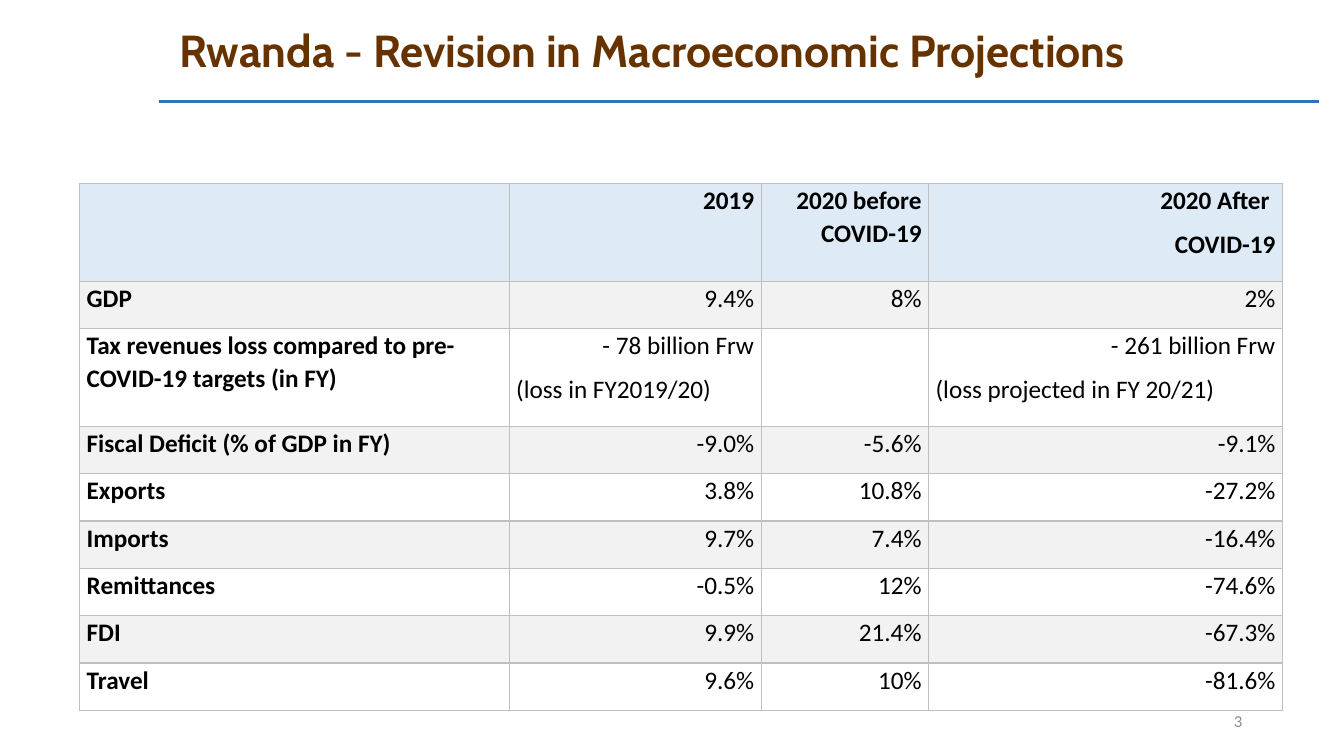
"""Build the slide on revised macroeconomic projections for Rwanda."""
from dataclasses import dataclass
from lxml.etree import SubElement
from pptx import Presentation
from pptx.dml.color import RGBColor as Rgb
from pptx.enum.shapes import MSO_CONNECTOR as Conn
from pptx.enum.text import MSO_ANCHOR as Anchor, PP_ALIGN as Align
from pptx.oxml import parse_xml
from pptx.oxml.ns import nsdecls, qn
from pptx.util import Inches, Pt

TITLE = "Rwanda - Revision in Macroeconomic Projections"
PAGE = "3"
HEAD = ("", "2019", "2020 before COVID-19", "2020 After \nCOVID-19")
ROWS = [
    ("GDP", "9.4%", "8%", "2%"),
    ("Tax revenues loss compared to pre-COVID-19 targets (in FY)",
     "- 78 billion Frw\n(loss in FY2019/20)", "",
     "- 261 billion Frw\n(loss projected in FY 20/21)"),
    ("Fiscal Deficit (% of GDP in FY)", "-9.0%", "-5.6%", "-9.1%"),
    ("Exports", "3.8%", "10.8%", "-27.2%"),
    ("Imports", "9.7%", "7.4%", "-16.4%"),
    ("Remittances", "-0.5%", "12%", "-74.6%"),
    ("FDI", "9.9%", "21.4%", "-67.3%"),
    ("Travel", "9.6%", "10%", "-81.6%"),
]
COLS = (4.26, 2.5, 1.66, 3.51)
LOW, TALL = 0.47, 0.97


@dataclass(frozen=True)
class Theme:
    title: str = "663300"
    rule: str = "2E75B6"
    text: str = "000000"
    page: str = "8C8C8C"
    head: str = "DEEAF6"
    band: str = "F2F2F2"
    grid: str = "BFBFBF"
    big: int = 32
    body: int = 18
    small: int = 12


LOOK = Theme()


def style(para, size, color, face="Calibri", bold=False, **form):
    """Give a paragraph its font and format."""
    font = para.font
    for key, val in dict(size=Pt(size), name=face, bold=bold).items():
        setattr(font, key, val)
    font.color.rgb = Rgb.from_string(color)
    for key, val in form.items():
        setattr(para, key, val)


def label(slide, box, text, *look, **form):
    """Place one line of text in a box."""
    frame = slide.shapes.add_textbox(*map(Inches, box)).text_frame
    frame.word_wrap = True
    frame.vertical_anchor = Anchor.MIDDLE
    frame.text = text
    style(frame.paragraphs[0], *look, **form)


def edge(cell):
    """Draw the four borders of a cell."""
    props = cell._tc.get_or_add_tcPr()
    for i, side in enumerate("LRTB"):
        line = parse_xml(
            f'<a:ln{side} {nsdecls("a")} w="{Pt(1)}"><a:solidFill>'
            f'<a:srgbClr val="{LOOK.grid}"/></a:solidFill></a:ln{side}>')
        props.insert(i, line)


def fill_cell(cell, text, row, col):
    """Write and format one table cell."""
    pads = dict(margin_left=0.07, margin_right=0.07, margin_top=0, margin_bottom=0)
    for key, val in pads.items():
        setattr(cell, key, Inches(val))
    cell.text = text
    for para in cell.text_frame.paragraphs:
        left = col == 0 or para.text.startswith("(")
        style(para, LOOK.body, LOOK.text, bold=row == 0 or col == 0,
              alignment=Align.LEFT if left else Align.RIGHT,
              line_spacing=1.07,
              space_after=Pt(0 if ROWS[row - 1][0].startswith("Fiscal") else 8))
    tint = LOOK.head if row == 0 else LOOK.band if row % 2 else None
    if tint:
        cell.fill.solid()
        cell.fill.fore_color.rgb = Rgb.from_string(tint)
    else:
        cell.fill.background()
    edge(cell)


def add_grid(slide):
    """Add the table of projections."""
    data = [HEAD, *ROWS]
    highs = [TALL if any("\n" in t for t in row) else LOW for row in data]
    box = map(Inches, (0.79, 1.82, sum(COLS), sum(highs)))
    table = slide.shapes.add_table(len(data), len(COLS), *box).table
    for col, wide in zip(table.columns, COLS):
        col.width = Inches(wide)
    for r, (row, high) in enumerate(zip(data, highs)):
        table.rows[r].height = Inches(high)
        for c, text in enumerate(row):
            fill_cell(table.cell(r, c), text, r, c)


def main():
    deck = Presentation()
    deck.slide_width, deck.slide_height = Inches(13.33), Inches(7.5)
    slide = deck.slides.add_slide(deck.slide_layouts[6])
    ends = map(Inches, (1.58, 1.01, 13.08, 1.01))
    rule = slide.shapes.add_connector(Conn.STRAIGHT, *ends)
    rule.line.color.rgb = Rgb.from_string(LOOK.rule)
    rule.line.width = Pt(2.25)
    SubElement(rule._element.spPr, qn("a:effectLst"))
    label(slide, (1.68, 0.07, 11.04, 0.91), TITLE, LOOK.big, LOOK.title,
          "Cabin", True, line_spacing=0.9)
    label(slide, (9.42, 6.95, 3, 0.4), PAGE, LOOK.small, LOOK.page,
          alignment=Align.RIGHT)
    add_grid(slide)
    deck.save("out.pptx")


if __name__ == "__main__":
    main()
